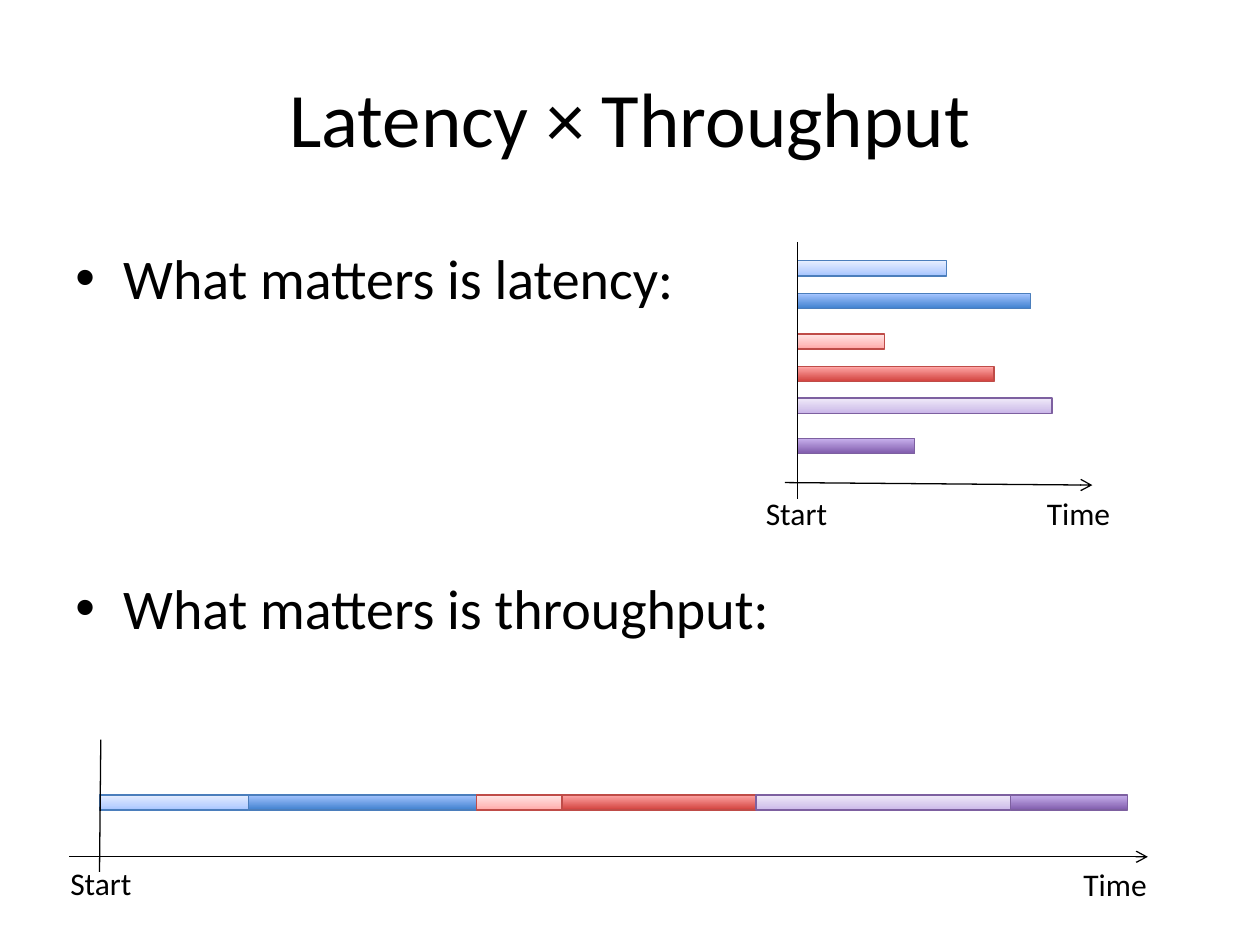
from dataclasses import dataclass

from lxml import etree
from pptx import Presentation
from pptx.dml.color import RGBColor
from pptx.enum.shapes import MSO_CONNECTOR, MSO_SHAPE
from pptx.enum.text import MSO_ANCHOR, MSO_AUTO_SIZE, PP_ALIGN
from pptx.oxml.ns import qn
from pptx.shapes.autoshape import Shape
from pptx.shapes.shapetree import GroupShapes, SlideShapes
from pptx.util import Inches, Pt

RECTANGLE = MSO_SHAPE.RECTANGLE
STRAIGHT = MSO_CONNECTOR.STRAIGHT
TOP, MIDDLE = MSO_ANCHOR.TOP, MSO_ANCHOR.MIDDLE
LEFT, CENTER = PP_ALIGN.LEFT, PP_ALIGN.CENTER
FIT_SHAPE = MSO_AUTO_SIZE.SHAPE_TO_FIT_TEXT

Point = tuple[float, float]
Area = tuple[float, float, float, float]


@dataclass(frozen=True)
class BarStyle:
    stops: tuple[tuple[int, str], ...]
    outline: str


@dataclass(frozen=True)
class Theme:
    font: str = "Calibri"
    ink: str = "000000"
    title_size: int = 44
    body_size: int = 32
    label_size: int = 18
    line_width: float = 0.75
    light_blue = BarStyle(((0, "A4C4FF"), (35, "BFD4FF"), (100, "E6EEFF")), "4B7EBC")
    blue = BarStyle(((0, "3F80CE"), (100, "A4C4FF")), "4B7EBC")
    light_red = BarStyle(((0, "FFA6A5"), (35, "FFC0BF"), (100, "FFE7E7")), "BF4C48")
    red = BarStyle(((0, "D1403C"), (100, "FFA6A5")), "BF4C48")
    light_purple = BarStyle(((0, "C9B5E8"), (35, "D8CBEE"), (100, "F0EAF9")), "7D60A0")
    purple = BarStyle(((0, "7F5BAB"), (100, "C8B0ED")), "7D60A0")


THEME = Theme()


@dataclass(frozen=True)
class Task:
    style: BarStyle
    duration: float
    parallel_top: float
    serial_left: float


@dataclass(frozen=True)
class Axes:
    origin: tuple[Point, Point]
    time: tuple[Point, Point]
    start_label: Point
    time_label: Point


TASKS = (
    Task(THEME.light_blue, 1.18, 2.07, 0.79),
    Task(THEME.blue, 1.85, 2.33, 1.97),
    Task(THEME.light_red, 0.69, 2.65, 3.78),
    Task(THEME.red, 1.56, 2.91, 4.46),
    Task(THEME.light_purple, 2.02, 3.16, 6.0),
    Task(THEME.purple, 0.93, 3.48, 8.02),
)
BAR_HEIGHT = 0.12
PARALLEL_LEFT = 6.33
SERIAL_TOP = 6.31

PARALLEL_AXES = Axes(
    origin=((6.33, 1.92), (6.33, 3.96)),
    time=((6.23, 3.83), (8.67, 3.85)),
    start_label=(5.98, 3.87),
    time_label=(8.21, 3.87),
)
SERIAL_AXES = Axes(
    origin=((0.8, 5.87), (0.79, 6.92)),
    time=((0.55, 6.8), (9.11, 6.8)),
    start_label=(0.46, 6.81),
    time_label=(8.5, 6.82),
)


def add_text(shapes: SlideShapes | GroupShapes, text: str, area: Area, size: int,
             align: PP_ALIGN = LEFT, anchor: MSO_ANCHOR = TOP, wrap: bool = True) -> Shape:
    box = shapes.add_textbox(*map(Inches, area))
    frame = box.text_frame
    frame.word_wrap = wrap
    frame.vertical_anchor = anchor
    para = frame.paragraphs[0]
    para.text = text
    para.alignment = align
    para.font.name = THEME.font
    para.font.size = Pt(size)
    para.font.color.rgb = RGBColor.from_string(THEME.ink)
    return box


def add_bullet(shapes: SlideShapes, text: str, area: Area) -> None:
    box = add_text(shapes, text, area, THEME.body_size)
    properties = box.text_frame.paragraphs[0]._p.get_or_add_pPr()
    properties.set("marL", str(Inches(0.38)))
    properties.set("indent", str(-Inches(0.38)))
    bullet_font = etree.Element(qn("a:buFont"), typeface="Arial")
    bullet = etree.Element(qn("a:buChar"), char="•")
    properties.insert(0, bullet_font)
    properties.insert(1, bullet)


def add_label(shapes: GroupShapes, text: str, corner: Point) -> None:
    box = add_text(shapes, text, (*corner, 0.7, 0.4), THEME.label_size, wrap=False)
    box.text_frame.auto_size = FIT_SHAPE


def add_bar(shapes: GroupShapes, left: float, top: float, task: Task) -> None:
    area = (left, top, task.duration, BAR_HEIGHT)
    bar = shapes.add_shape(RECTANGLE, *map(Inches, area))
    bar.shadow.inherit = False
    bar.line.color.rgb = RGBColor.from_string(task.style.outline)
    bar.line.width = Pt(THEME.line_width)
    bar.fill.gradient()
    bar.fill.gradient_angle = 90
    stop_list = bar._element.spPr.find(qn("a:gradFill")).find(qn("a:gsLst"))
    stop_list.clear()
    for percent, color in task.style.stops:
        stop = etree.SubElement(stop_list, qn("a:gs"), pos=str(percent * 1000))
        etree.SubElement(stop, qn("a:srgbClr"), val=color)


def add_line(shapes: GroupShapes, ends: tuple[Point, Point], arrow: bool = False) -> None:
    start, end = ends
    line = shapes.add_connector(STRAIGHT, *map(Inches, (*start, *end)))
    line.line.color.rgb = RGBColor.from_string(THEME.ink)
    line.line.width = Pt(THEME.line_width)
    properties = line._element.spPr
    if arrow:
        etree.SubElement(properties.find(qn("a:ln")), qn("a:tailEnd"), type="arrow")
    etree.SubElement(properties, qn("a:effectLst"))


def add_axes(shapes: GroupShapes, axes: Axes) -> None:
    add_line(shapes, axes.origin)
    add_line(shapes, axes.time, arrow=True)
    add_label(shapes, "Start", axes.start_label)
    add_label(shapes, "Time", axes.time_label)


def main() -> None:
    deck = Presentation()
    deck.slide_width, deck.slide_height = Inches(10), Inches(7.5)
    page = deck.slides.add_slide(deck.slide_layouts[6])

    add_text(page.shapes, "Latency × Throughput", (0.5, 0.3, 9, 1.25),
             THEME.title_size, CENTER, MIDDLE)
    add_bullet(page.shapes, "What matters is latency:", (0.5, 1.88, 9, 2.27))
    add_bullet(page.shapes, "What matters is throughput:", (0.5, 4.5, 9, 1.96))

    parallel = page.shapes.add_group_shape().shapes
    serial = page.shapes.add_group_shape().shapes
    for task in TASKS:
        add_bar(parallel, PARALLEL_LEFT, task.parallel_top, task)
        add_bar(serial, task.serial_left, SERIAL_TOP, task)
    add_axes(parallel, PARALLEL_AXES)
    add_axes(serial, SERIAL_AXES)

    deck.save("out.pptx")


if __name__ == "__main__":
    main()
